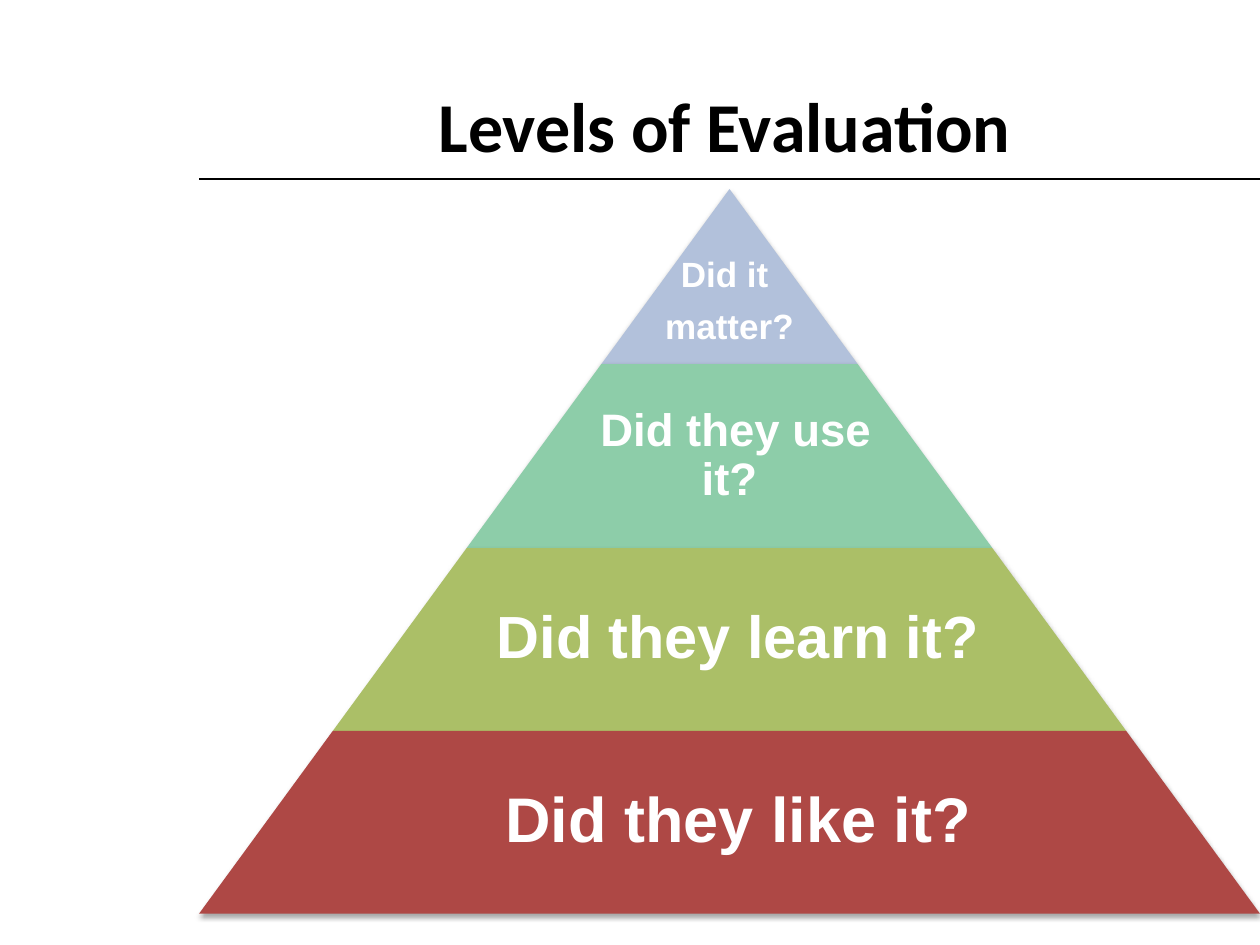
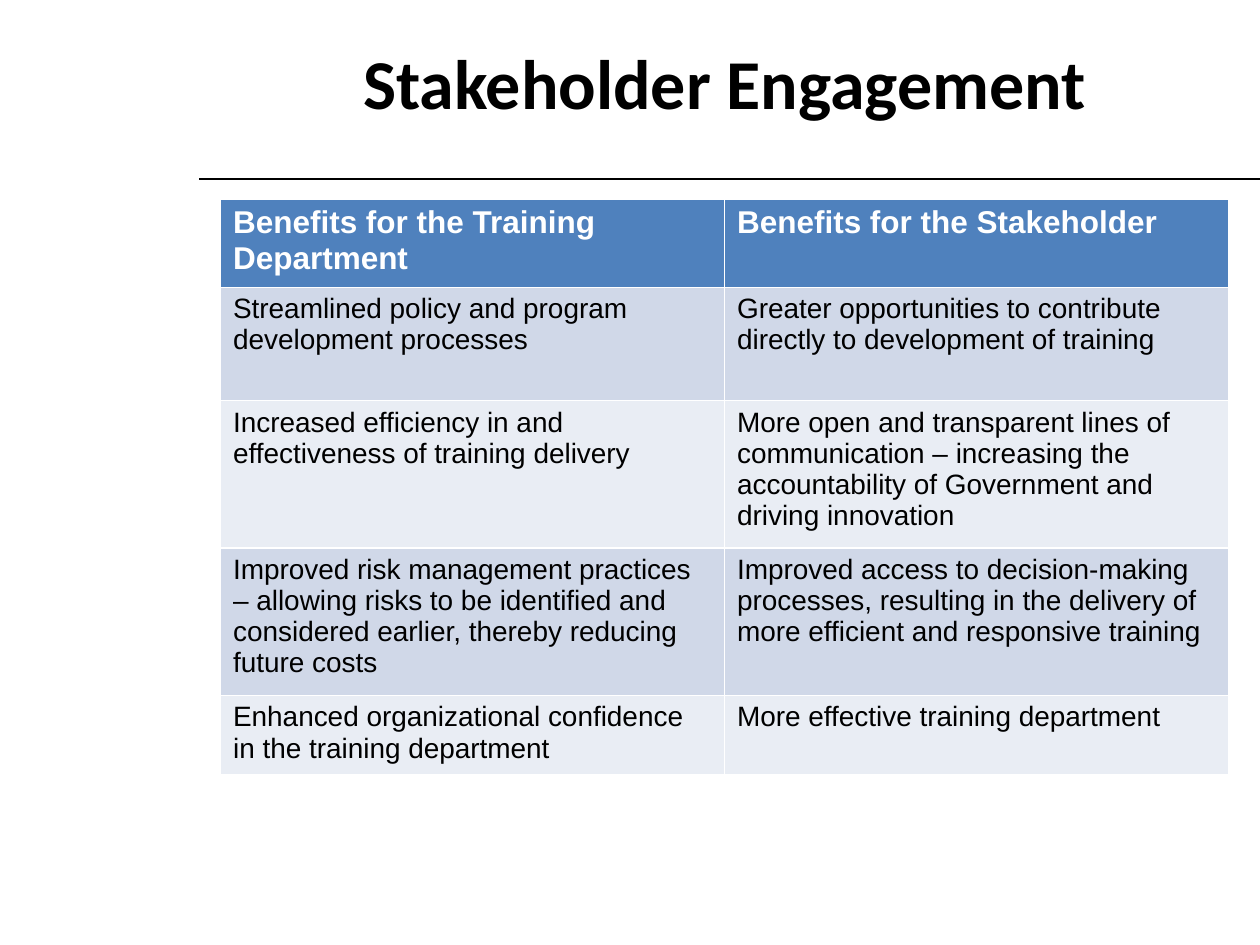
from lxml.etree import SubElement
from pptx import Presentation
from pptx.dml.color import RGBColor
from pptx.enum.shapes import MSO_CONNECTOR, MSO_SHAPE
from pptx.enum.text import MSO_ANCHOR, MSO_AUTO_SIZE, PP_ALIGN
from pptx.oxml.ns import qn
from pptx.util import Inches, Pt

BLACK = RGBColor(0x00, 0x00, 0x00)
WHITE = RGBColor(0xFF, 0xFF, 0xFF)
PALE_BLUE = RGBColor(0xB2, 0xC1, 0xDB)
MINT = RGBColor(0x8D, 0xCD, 0xA9)
OLIVE = RGBColor(0xAB, 0xBF, 0x67)
BRICK = RGBColor(0xAE, 0x48, 0x45)
HEADER_BLUE = RGBColor(0x4F, 0x81, 0xBD)
BANDS = [RGBColor(0xE9, 0xED, 0xF4), RGBColor(0xD0, 0xD8, 0xE8)]

TITLE_FONT = {"name": "Calibri", "size": Pt(40), "bold": True}
LEVEL_FONT = {"name": "Arial", "bold": True}
HEADER_FONT = {"name": "Arial", "size": Pt(18), "bold": True}
CELL_FONT = {"name": "Arial", "size": Pt(16), "bold": False}
FRAME = {"word_wrap": True, "auto_size": MSO_AUTO_SIZE.NONE,
         "vertical_anchor": MSO_ANCHOR.MIDDLE}


def apply_format(target, values, color=None):
    for key, value in values.items():
        setattr(target, key, value)
    if color is not None:
        target.color.rgb = color


def add_titled_slide(text, margin_top):
    slide = deck.slides.add_slide(deck.slide_layouts[5])
    rule = slide.shapes.add_connector(
        MSO_CONNECTOR.STRAIGHT, Inches(1.58), Inches(1.42), Inches(10), Inches(1.42))
    apply_format(rule.line, {"width": Pt(0.75)}, BLACK)
    SubElement(rule._element.spPr, qn("a:effectLst"))
    title = slide.shapes.title
    apply_format(title, {"left": Inches(1.75), "top": Inches(0),
                         "width": Inches(8), "height": Inches(1.3)})
    title.text_frame.text = text
    apply_format(title.text_frame, FRAME | {"margin_top": Inches(margin_top)})
    heading = title.text_frame.paragraphs[0]
    heading.alignment = PP_ALIGN.CENTER
    apply_format(heading.font, TITLE_FONT, BLACK)
    return slide


deck = Presentation()
deck.slide_width = Inches(10)
deck.slide_height = Inches(7.5)

evaluation = add_titled_slide("Levels of Evaluation", 0.73)
APEX_X, APEX_Y, SLOPE = 5.79, 1.5, 0.732
levels = [
    (["Did it ", "matter?"], 20, PALE_BLUE, 1.39, 2.04, 0.03, 0.44),
    ([" Did they use it?"], 26, MINT, 1.46, 2.71, 0.04, 0.04),
    ([" Did they learn it?"], 34, OLIVE, 1.45, 4.09, 0.06, 0.06),
    ([" Did they like it?"], 36, BRICK, 1.45, 5.47, 0.05, 0.05),
]
depth = 0
for lines, size, color, height, label_width, inset, inset_top in levels:
    top = APEX_Y + depth
    depth += height
    half_width = SLOPE * depth
    level = evaluation.shapes.add_shape(
        MSO_SHAPE.TRAPEZOID, Inches(APEX_X - half_width), Inches(top),
        Inches(2 * half_width), Inches(height))
    level.adjustments[0] = SLOPE
    level.fill.solid()
    level.fill.fore_color.rgb = color
    level.line.fill.background()
    level.shadow.inherit = False
    effects = level._element.spPr.find(qn("a:effectLst"))
    shadow = SubElement(effects, qn("a:outerShdw"), blurRad=str(Pt(3.1)),
                        dist=str(Pt(1.8)), dir="5400000", rotWithShape="0")
    shade = SubElement(shadow, qn("a:srgbClr"), val=str(BLACK))
    SubElement(shade, qn("a:alpha"), val="35000")

    label = evaluation.shapes.add_textbox(
        Inches(APEX_X - label_width / 2), Inches(top),
        Inches(label_width), Inches(height)).text_frame
    label.text = "\n".join(lines)
    apply_format(label, FRAME | {
        "margin_left": Inches(inset), "margin_right": Inches(inset),
        "margin_top": Inches(inset_top), "margin_bottom": Inches(inset)})
    for question in label.paragraphs:
        apply_format(question, {"alignment": PP_ALIGN.CENTER, "line_spacing": 0.9,
                                "space_after": Pt(0.4 * size)})
        apply_format(question.font, LEVEL_FONT | {"size": Pt(size)}, WHITE)

engagement = add_titled_slide("Stakeholder Engagement", 0.05)
benefits = [
    ("Benefits for the Training Department", "Benefits for the Stakeholder"),
    ("Streamlined policy and program development processes",
     "Greater opportunities to contribute directly to development of training"),
    ("Increased efficiency in and effectiveness of training delivery",
     "More open and transparent lines of communication – increasing the "
     "accountability of Government and driving innovation"),
    ("Improved risk management practices – allowing risks to be identified and "
     "considered earlier, thereby reducing future costs",
     "Improved access to decision-making processes, resulting in the delivery of "
     "more efficient and responsive training"),
    ("Enhanced organizational confidence in the training department",
     "More effective training department"),
]
row_heights = [0.7, 0.9, 1.17, 1.17, 0.63]
benefit_table = engagement.shapes.add_table(
    len(benefits), 2, Inches(1.75), Inches(1.58), Inches(8), Inches(4.57)).table
for row_index, (texts, height) in enumerate(zip(benefits, row_heights)):
    benefit_table.rows[row_index].height = Inches(height)
    is_header = row_index == 0
    for column_index, text in enumerate(texts):
        cell = benefit_table.cell(row_index, column_index)
        cell.text = text
        cell.fill.solid()
        cell.fill.fore_color.rgb = HEADER_BLUE if is_header else BANDS[row_index % 2]
        apply_format(cell.text_frame.paragraphs[0].font,
                     HEADER_FONT if is_header else CELL_FONT,
                     WHITE if is_header else BLACK)

deck.save("out.pptx")
